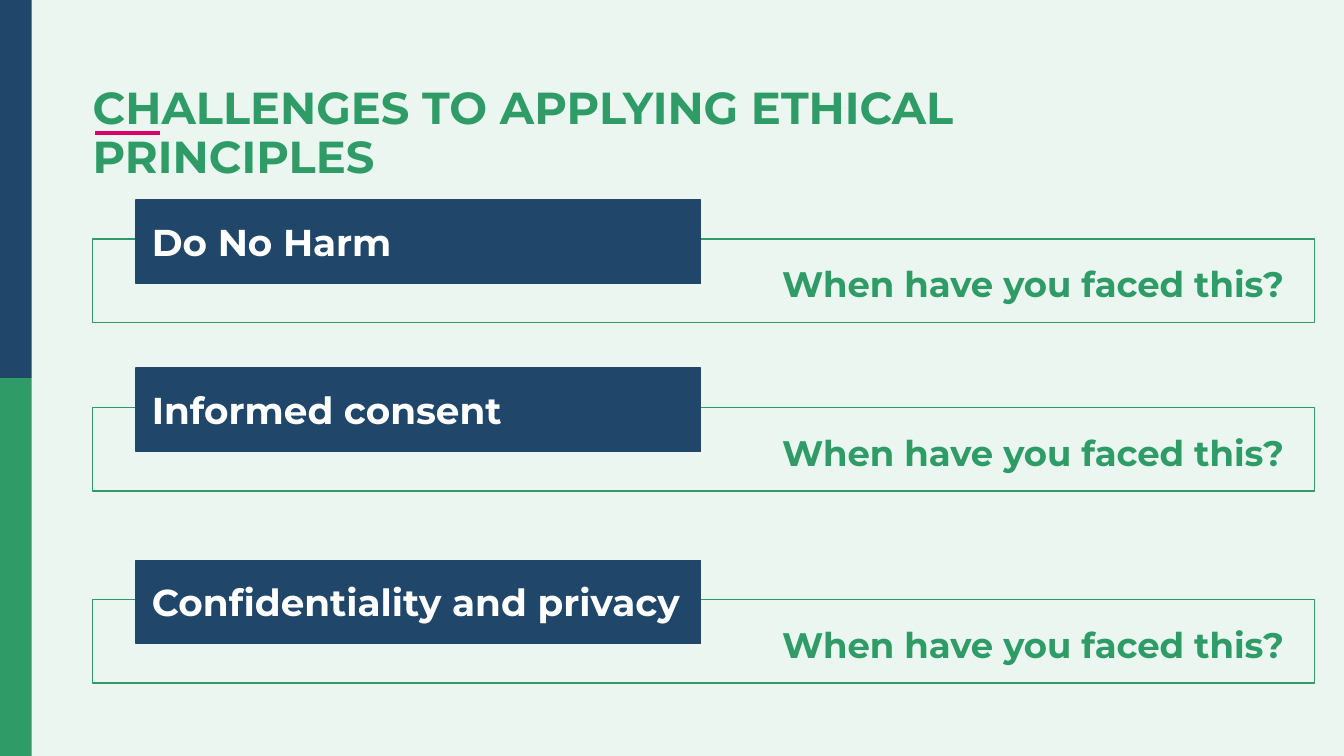
from dataclasses import dataclass

import pptx
import pptx.dml.color
import pptx.enum.shapes
import pptx.enum.text
import pptx.oxml.ns
import pptx.shapes.autoshape
import pptx.slide
import pptx.text.text
import pptx.util
from lxml import etree

Cm = pptx.util.Cm
Pt = pptx.util.Pt
RGBColor = pptx.dml.color.RGBColor
Anchor = pptx.enum.text.MSO_ANCHOR
Fit = pptx.enum.text.MSO_AUTO_SIZE

MINT = RGBColor(0xEB, 0xF6, 0xF1)
GREEN = RGBColor(0x2F, 0x9C, 0x67)
NAVY = RGBColor(0x20, 0x46, 0x69)
PINK = RGBColor(0xD9, 0x03, 0x68)
WHITE = RGBColor(0xFF, 0xFF, 0xFF)

FONT = "Montserrat"
QUERY = "When have you faced this?"
WIDTH, HEIGHT = 25.4, 14.29
LEFT = 1.75
ROW_TALL = 1.58


@dataclass
class Box:
    left: float
    top: float
    width: float
    height: float

    def sides(self) -> list[pptx.util.Length]:
        return [Cm(v) for v in (self.left, self.top, self.width, self.height)]


@dataclass
class Topic:
    name: str
    top: float


TOPICS = [
    Topic("Do No Harm", 4.52),
    Topic("Informed consent", 7.7),
    Topic("Confidentiality and privacy", 11.33),
]


def add_rect(
    slide: pptx.slide.Slide,
    box: Box,
    fill: RGBColor | None = None,
    line: RGBColor | None = None,
) -> pptx.shapes.autoshape.Shape:
    kind = pptx.enum.shapes.MSO_SHAPE.RECTANGLE
    rect = slide.shapes.add_shape(kind, *box.sides())
    rect.shadow.inherit = False
    if fill is None:
        rect.fill.background()
    else:
        rect.fill.solid()
        rect.fill.fore_color.rgb = fill
    if line is None:
        rect.line.fill.background()
    else:
        rect.line.color.rgb = line
        rect.line.width = Pt(0.75)
    return rect


def write(
    frame: pptx.text.text.TextFrame,
    text: str,
    size: int,
    color: RGBColor,
    anchor: Anchor,
    pads: tuple[float, float, float, float],
) -> None:
    """Put one bold left-aligned run in the frame; pads go left, top, right, bottom."""
    frame.word_wrap = True
    frame.auto_size = Fit.SHAPE_TO_FIT_TEXT
    frame.vertical_anchor = anchor
    frame.margin_left, frame.margin_top, frame.margin_right, frame.margin_bottom = (
        Cm(pad) for pad in pads
    )
    para = frame.paragraphs[0]
    para.alignment = pptx.enum.text.PP_ALIGN.LEFT
    run = para.add_run()
    run.text = text
    run.font.name = FONT
    run.font.size = Pt(size)
    run.font.bold = True
    run.font.color.rgb = color


def add_title(slide: pptx.slide.Slide) -> None:
    title = slide.shapes.title
    title.left, title.top, title.width, title.height = Box(LEFT, 1.5, 21.89, 2.11).sides()
    write(title.text_frame, "CHALLENGES TO APPLYING ETHICAL PRINCIPLES",
          24, GREEN, Anchor.TOP, (0, 0.13, 0.25, 0.13))
    title.text_frame.paragraphs[0].line_spacing = 0.9


def add_accent(slide: pptx.slide.Slide) -> None:
    kind = pptx.enum.shapes.MSO_CONNECTOR.STRAIGHT
    line = slide.shapes.add_connector(kind, Cm(1.8), Cm(2.51), Cm(3.02), Cm(2.51))
    line.line.color.rgb = PINK
    line.line.width = Pt(2.25)
    props = line.element.spPr
    etree.SubElement(props, pptx.oxml.ns.qn("a:effectLst"))


def add_topic(slide: pptx.slide.Slide, topic: Topic) -> None:
    add_rect(slide, Box(LEFT, topic.top, 23.09, ROW_TALL), line=GREEN)
    label = add_rect(slide, Box(2.57, topic.top - 0.74, 10.67, ROW_TALL), NAVY, NAVY)
    write(label.text_frame, topic.name, 20, WHITE, Anchor.MIDDLE, (0.3, 0.3, 0.1, 0.3))
    query = slide.shapes.add_textbox(*Box(14.53, topic.top + 0.31, 10.29, 1.07).sides())
    write(query.text_frame, QUERY, 19, GREEN, Anchor.TOP, (0.25, 0.13, 0.25, 0.13))


def main() -> None:
    deck = pptx.Presentation()
    deck.slide_width, deck.slide_height = Cm(WIDTH), Cm(HEIGHT)
    slide = deck.slides.add_slide(deck.slide_layouts.get_by_name("Title Only"))
    slide.background.fill.solid()
    slide.background.fill.fore_color.rgb = MINT

    add_title(slide)
    add_accent(slide)
    half = HEIGHT / 2
    for i, color in enumerate((NAVY, GREEN)):
        add_rect(slide, Box(0, i * half, 0.6, half), color)
    for topic in TOPICS:
        add_topic(slide, topic)

    deck.save("out.pptx")


if __name__ == "__main__":
    main()
